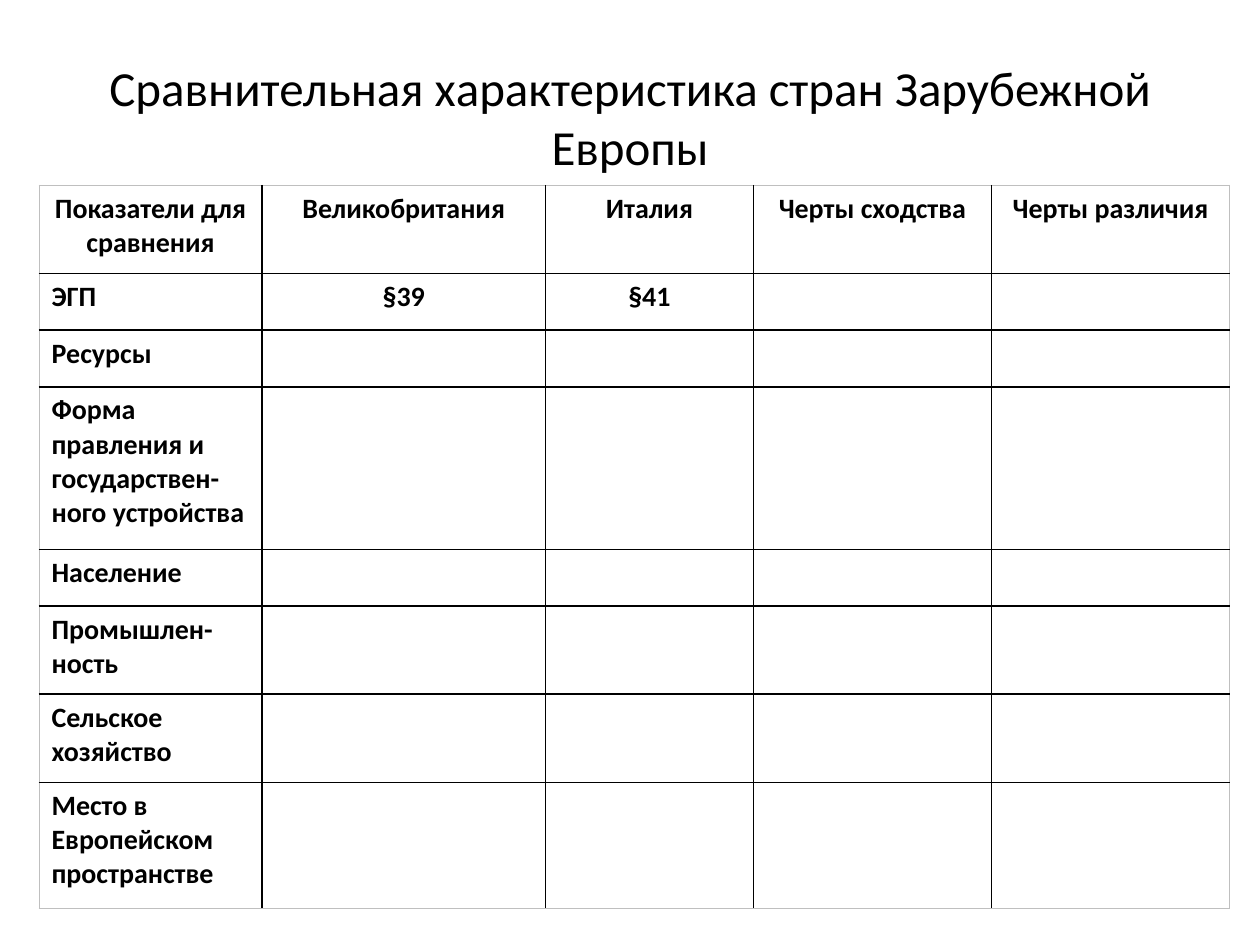
import pptx
import pptx.util
import pptx.dml.color
import pptx.enum.text
import pptx.oxml
import pptx.oxml.ns
from lxml import etree

Inches = pptx.util.Inches
ALIGN = pptx.enum.text.PP_ALIGN
ANCHOR = pptx.enum.text.MSO_ANCHOR

COLORS = {"text": "000000", "inner": "000000", "outer": "BFBFBF"}
FONT = "Calibri"


def put_text(tf, text, size=16, bold=False, align=ALIGN.LEFT, color="text"):
    """Fill a text frame, one paragraph per line of text."""
    for i, line in enumerate(text.split("\n")):
        p = tf.paragraphs[0] if i == 0 else tf.add_paragraph()
        p.alignment = align
        r = p.add_run()
        r.text = line
        r.font.name = FONT
        r.font.size = pptx.util.Pt(size)
        r.font.bold = bold
        r.font.color.rgb = pptx.dml.color.RGBColor.from_string(COLORS[color])


def set_border(cell, side, color, width):
    """Draw one side of a cell: L, R, T or B."""
    qn = pptx.oxml.ns.qn
    ln = etree.SubElement(cell._tc.get_or_add_tcPr(), qn(f"a:ln{side}"),
                          w=str(pptx.util.Pt(width)))
    fill = etree.SubElement(ln, qn("a:solidFill"))
    etree.SubElement(fill, qn("a:srgbClr"), val=COLORS[color])


class SlideBuilder:
    def __init__(self, slide):
        self.s = slide

    def title(self, text, left, top, width, height):
        sp = self.s.shapes.add_textbox(Inches(left), Inches(top),
                                       Inches(width), Inches(height))
        tf = sp.text_frame
        tf.word_wrap = True
        tf.vertical_anchor = ANCHOR.MIDDLE
        put_text(tf, text, size=28, align=ALIGN.CENTER)

    def table(self, rows, left, top, widths, heights):
        table = self.s.shapes.add_table(
            len(heights), len(widths), Inches(left), Inches(top),
            Inches(sum(widths)), Inches(sum(heights))).table
        table.first_row = table.horz_banding = False
        for col, width in zip(table.columns, widths):
            col.width = Inches(width)
        for row, height in zip(table.rows, heights):
            row.height = Inches(height)

        last_row, last_col = len(heights) - 1, len(widths) - 1
        for i, texts in enumerate(rows):
            for j in range(len(widths)):
                cell = table.cell(i, j)
                # Borders go before the fill: grey frame, black grid
                edges = {"L": j == 0, "R": j == last_col,
                         "T": i == 0, "B": i == last_row}
                for side, is_outer in edges.items():
                    set_border(cell, side, "outer" if is_outer else "inner",
                               0.5 if is_outer else 1)
                cell.fill.background()
                # Only the row labels are aligned left
                if j < len(texts):
                    centered = i == 0 or j > 0
                    put_text(cell.text_frame, texts[j], bold=True,
                             align=ALIGN.CENTER if centered else ALIGN.LEFT)


def main():
    prs = pptx.Presentation()
    prs.slide_width, prs.slide_height = Inches(10), Inches(7.5)
    builder = SlideBuilder(prs.slides.add_slide(prs.slide_layouts[6]))

    # Heading
    builder.title("Сравнительная характеристика стран Зарубежной Европы",
                  0.5, 0.3, 9, 1.25)

    # Comparison table; missing cells stay empty for the pupil
    rows = [
        ["Показатели для сравнения", "Великобритания", "Италия",
         "Черты сходства", "Черты различия"],
        ["ЭГП", "§39", "§41"],
        ["Ресурсы"],
        ["Форма правления и государствен-\nного устройства"],
        ["Население"],
        ["Промышлен-\nность"],
        ["Сельское хозяйство"],
        ["Место в Европейском пространстве"],
    ]
    builder.table(rows, 0.31, 1.47,
                  widths=[1.77, 2.25, 1.65, 1.89, 1.89],
                  heights=[0.7, 0.45, 0.45, 1.29, 0.45, 0.7, 0.7, 1])

    prs.save("out.pptx")


if __name__ == "__main__":
    main()
